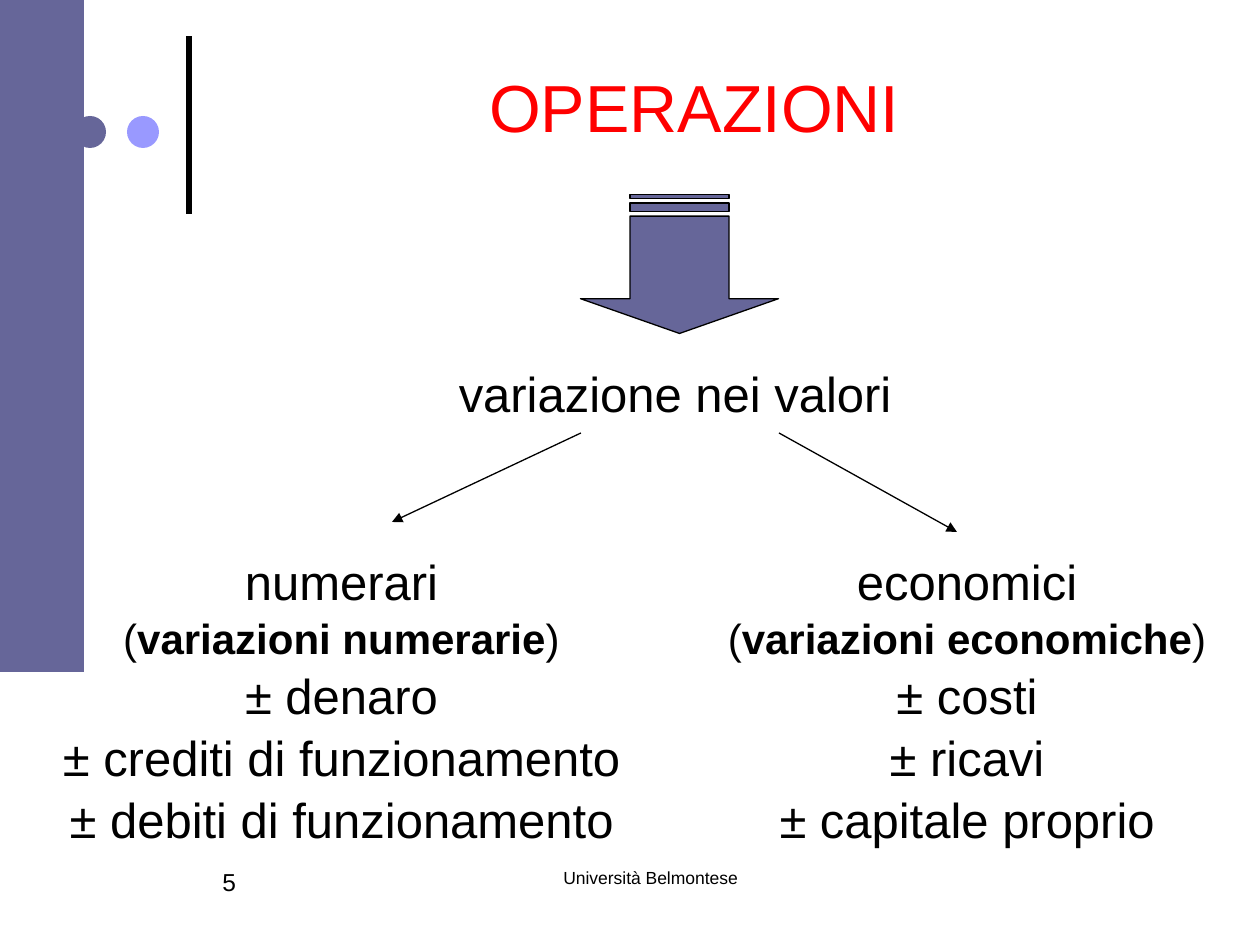
from pptx import Presentation
from pptx.dml.color import RGBColor
from pptx.enum.shapes import MSO_CONNECTOR as CONN, MSO_SHAPE as SHAPE
from pptx.enum.text import MSO_ANCHOR as ANCHOR, PP_ALIGN as ALIGN
from pptx.oxml.ns import qn
from pptx.util import Pt
from lxml.etree import SubElement

# Content: a line is a list of (text, bold) runs with a size
TITLE = "OPERAZIONI"
SUBJECT = "variazione nei valori"
FOOTER = "Università Belmontese"
NUMBER = "5"
BRANCHES = [
    ("numerari", "variazioni numerarie",
     ["± denaro", "± crediti di funzionamento", "± debiti di funzionamento"]),
    ("economici", "variazioni economiche",
     ["± costi", "± ricavi", "± capitale proprio"]),
]

# Layout in px, 126 to the inch
BRANCH_BOXES = [(34, 542, 615, 299), (674, 542, 586, 299)]
BRANCH_ARROWS = [(581, 433, 392, 522), (779, 433, 957, 532)]
DOTS = [(74, "slate"), (127, "lilac")]
COLORS = {"slate": "666699", "lilac": "9999FF", "black": "000000", "red": "FF0000"}
FONT = "Arial"
PX = 914400 // 126


def emu(*lengths):
    return [v * PX for v in lengths]


def rgb(name):
    return RGBColor.from_string(COLORS[name])


def add_filled(kind, box, color, outline=None):
    sp = s.shapes.add_shape(kind, *emu(*box))
    sp.shadow.inherit = False
    sp.fill.solid()
    sp.fill.fore_color.rgb = rgb(color)
    if outline:
        sp.line.color.rgb = rgb(outline)
        sp.line.width = Pt(0.75)
    else:
        sp.line.fill.background()
    return sp


def add_line(ends, width, arrow=False):
    cn = s.shapes.add_connector(CONN.STRAIGHT, *emu(*ends))
    cn.line.color.rgb = rgb("black")
    cn.line.width = Pt(width)
    if arrow:
        SubElement(cn.line._get_or_add_ln(), qn("a:tailEnd"), type="triangle")
    SubElement(cn._element.spPr, qn("a:effectLst"))


def write(tf, lines, align=ALIGN.CENTER, color="black", spacing=None):
    tf.word_wrap = True
    for i, (runs, size) in enumerate(lines):
        p = tf.paragraphs[0] if i == 0 else tf.add_paragraph()
        p.alignment = align
        p.line_spacing = spacing
        for text, bold in runs:
            r = p.add_run()
            r.text = text
            r.font.name = FONT
            r.font.size = Pt(size)
            r.font.bold = bold
            r.font.color.rgb = rgb(color)


def add_text(box, lines, **style):
    write(s.shapes.add_textbox(*emu(*box)).text_frame, lines, **style)


prs = Presentation()
prs.slide_width, prs.slide_height = emu(1260, 945)
s = prs.slides.add_slide(prs.slide_layouts[5])

# Side decoration
add_line((189, 214, 189, 36), 3)
for x, color in DOTS:
    add_filled(SHAPE.OVAL, (x, 116, 32, 32), color)
add_filled(SHAPE.RECTANGLE, (0, 0, 84, 672), "slate")

# Footer and slide number
add_text((451, 861, 399, 63), [([(FOOTER, False)], 10)])
add_text((210, 861, 179, 63), [([(NUMBER, False)], 14)], align=ALIGN.LEFT)

# Title
title = s.shapes.title
title.left, title.top, title.width, title.height = emu(213, 66, 963, 79)
title.text_frame.vertical_anchor = ANCHOR.MIDDLE
write(title.text_frame, [([(TITLE, False)], 38)], color="red")

# Arrow down to the subject
down = add_filled(SHAPE.STRIPED_RIGHT_ARROW, (610, 165, 139, 198), "slate", "black")
down.adjustments[0], down.adjustments[1] = 0.5, 0.25
down.rotation = 90
add_text((360, 354, 630, 72), [([(SUBJECT, False)], 28)], spacing=1.05)

# Two branches
for (head, note, items), box, ends in zip(BRANCHES, BRANCH_BOXES, BRANCH_ARROWS):
    lines = [([(head, False)], 28),
             ([("(", False), (note, True), (")", False)], 24)]
    lines += [([(item, False)], 28) for item in items]
    add_text(box, lines, spacing=1.05)
    add_line(ends, 0.75, arrow=True)

prs.save("out.pptx")
